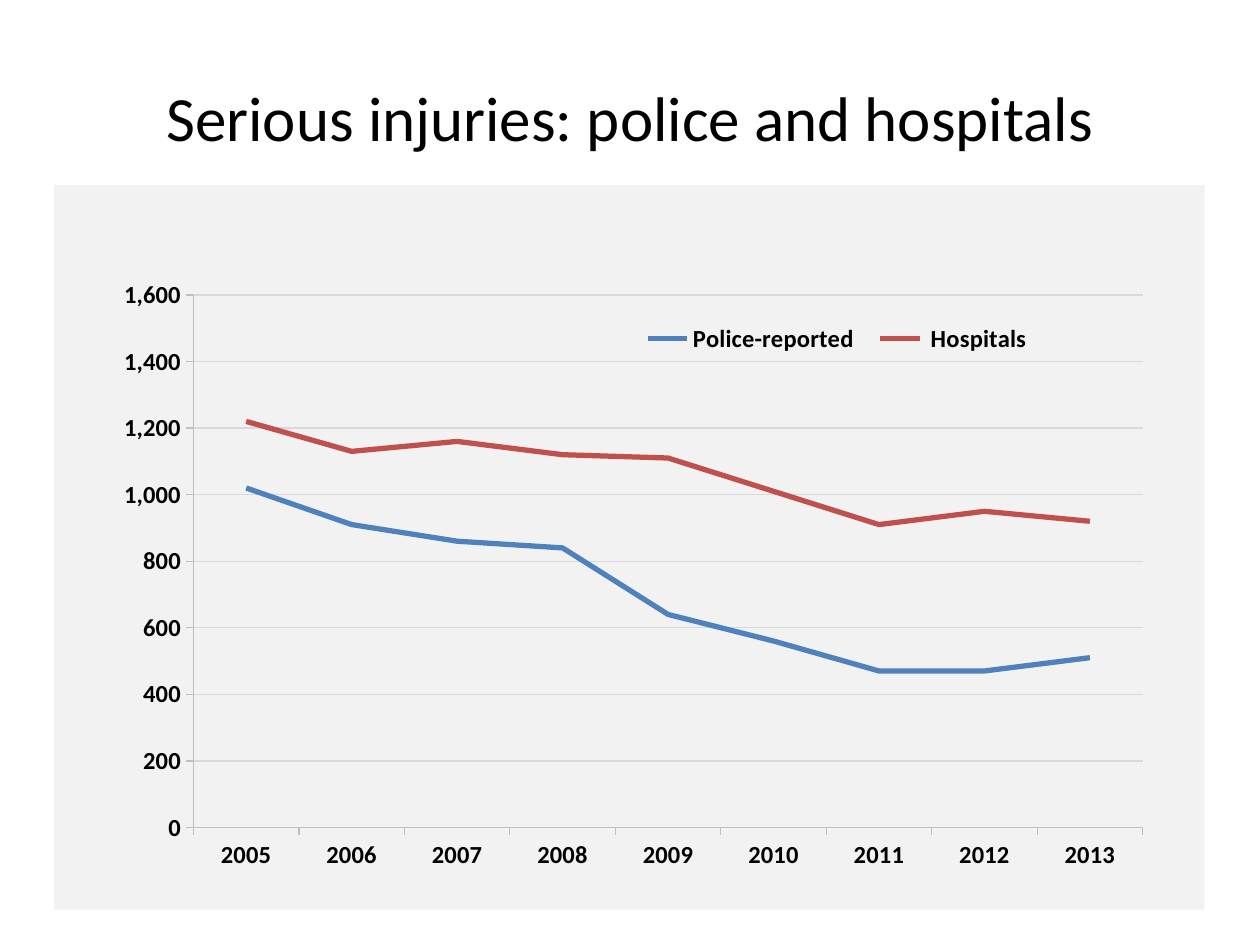
from lxml import etree
from pptx import Presentation
from pptx.chart.data import CategoryChartData
from pptx.dml.color import RGBColor
from pptx.enum.chart import XL_CHART_TYPE, XL_LEGEND_POSITION, XL_TICK_MARK
from pptx.enum.shapes import MSO_SHAPE
from pptx.enum.text import MSO_ANCHOR, PP_ALIGN
from pptx.oxml.ns import qn
from pptx.util import Pt

LINE_CHART = XL_CHART_TYPE.LINE
LEGEND_TOP = XL_LEGEND_POSITION.TOP
TICK_OUTSIDE, TICK_NONE = XL_TICK_MARK.OUTSIDE, XL_TICK_MARK.NONE
RECTANGLE = MSO_SHAPE.RECTANGLE
MIDDLE, CENTER = MSO_ANCHOR.MIDDLE, PP_ALIGN.CENTER

TITLE = "Serious injuries: police and hospitals"
YEARS = [str(year) for year in range(2005, 2014)]
INJURIES = [
    ("Police-reported", "police", [1020, 910, 860, 840, 640, 560, 470, 470, 510]),
    (" Hospitals", "hospitals", [1220, 1130, 1160, 1120, 1110, 1010, 910, 950, 920]),
]

FONT = "Calibri"
COLORS = {
    "text": "000000",
    "panel": "F2F2F2",
    "axis": "BFBFBF",
    "grid": "D9D9D9",
    "police": "4F81BD",
    "hospitals": "C0504D",
}

# Left, top, width, height in points
TITLE_BOX = (36, 21.6, 648, 90)
PANEL_BOX = (31, 105.8, 657.4, 414)
CHART_BOX = (48.2, 133.9, 623.5, 385.2)
# Left, top, width, height as shares of the chart
PLOT_SHARE = (0.1, 0.09, 0.87, 0.79)
LEGEND_SHARE = (0.5, 0.12, 0.38, 0.07)


def rgb(name):
    return RGBColor.from_string(COLORS[name])


def points(box):
    return [Pt(length) for length in box]


def style_font(font, size, bold=False):
    font.name, font.size, font.bold = FONT, Pt(size), bold
    font.color.rgb = rgb("text")


def style_line(line, color, width):
    line.color.rgb = rgb(color)
    line.width = Pt(width)


def place_in_chart(part, index, share, inner=False):
    """Give a chart part a manual layout as its child number index."""
    for old in part.findall(qn("c:layout")):
        part.remove(old)
    layout = etree.Element(qn("c:layout"))
    manual = etree.SubElement(layout, qn("c:manualLayout"))
    settings = [("layoutTarget", "inner")] if inner else []
    settings += [("xMode", "edge"), ("yMode", "edge")]
    settings += zip("xywh", share)
    for tag, value in settings:
        etree.SubElement(manual, qn("c:" + tag)).set("val", str(value))
    part.insert(index, layout)


def add_title(slide):
    title = slide.shapes.title
    title.left, title.top, title.width, title.height = points(TITLE_BOX)
    frame = title.text_frame
    frame.vertical_anchor = MIDDLE
    paragraph = frame.paragraphs[0]
    paragraph.alignment = CENTER
    run = paragraph.add_run()
    run.text = TITLE
    style_font(run.font, 36)


def add_panel(slide):
    panel = slide.shapes.add_shape(RECTANGLE, *points(PANEL_BOX))
    panel.shadow.inherit = False
    panel.fill.solid()
    panel.fill.fore_color.rgb = rgb("panel")
    panel.line.fill.background()


def add_injury_chart(slide):
    data = CategoryChartData(number_format="#,##0")
    data.categories = YEARS
    for name, _, counts in INJURIES:
        data.add_series(name, counts)
    chart = slide.shapes.add_chart(LINE_CHART, *points(CHART_BOX), data).chart
    chart.has_title = False
    style_font(chart.font, 10)

    plot = chart.plots[0]
    plot.vary_by_categories = False
    for series, (_, color, _) in zip(plot.series, INJURIES):
        series.smooth = False
        style_line(series.format.line, color, 3)

    for axis in (chart.category_axis, chart.value_axis):
        axis.major_tick_mark = TICK_OUTSIDE
        axis.minor_tick_mark = TICK_NONE
        style_line(axis.format.line, "axis", 0.75)
        style_font(axis.tick_labels.font, 14, bold=True)

    counts_axis = chart.value_axis
    counts_axis.minimum_scale, counts_axis.maximum_scale = 0, 1600
    counts_axis.major_unit = 200
    counts_axis.tick_labels.number_format = "#,##0"
    counts_axis.tick_labels.number_format_is_linked = False
    counts_axis.has_major_gridlines = True
    style_line(counts_axis.major_gridlines.format.line, "grid", 0.75)

    chart.has_legend = True
    legend = chart.legend
    legend.position = LEGEND_TOP
    legend.include_in_layout = False
    style_font(legend.font, 14, bold=True)

    chart_xml = chart.element.find(qn("c:chart"))
    place_in_chart(chart_xml.find(qn("c:plotArea")), 0, PLOT_SHARE, inner=True)
    place_in_chart(chart_xml.find(qn("c:legend")), 1, LEGEND_SHARE)


def main():
    deck = Presentation()
    deck.slide_width, deck.slide_height = Pt(720), Pt(540)
    slide = deck.slides.add_slide(deck.slide_layouts[5])
    add_title(slide)
    add_panel(slide)
    add_injury_chart(slide)
    deck.save("out.pptx")


if __name__ == "__main__":
    main()
